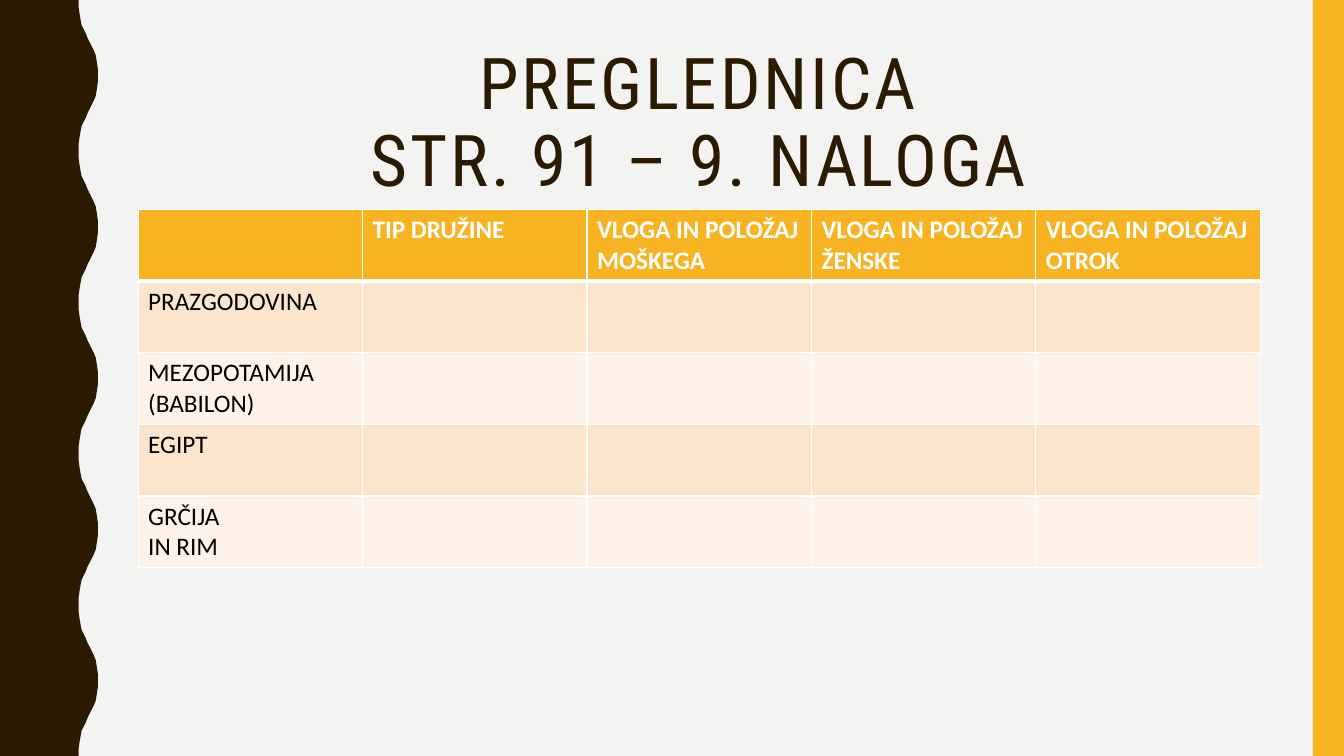
from lxml.etree import SubElement
from pptx import Presentation
from pptx.dml.color import RGBColor
from pptx.enum.shapes import MSO_SHAPE as Shape
from pptx.enum.text import MSO_ANCHOR as Anchor, MSO_AUTO_SIZE as AutoSize, PP_ALIGN as Align
from pptx.oxml.ns import qn
from pptx.util import Pt

PX = 9144
WIDTH, HEIGHT = 1333, 750
PAPER = RGBColor(0xF3, 0xF3, 0xF2)
BROWN = RGBColor(0x2A, 0x1A, 0x00)
AMBER = RGBColor(0xF8, 0xB3, 0x23)
PEACH = RGBColor(0xFC, 0xE5, 0xCD)
CREAM = RGBColor(0xFE, 0xF2, 0xE8)
WHITE = RGBColor(0xFF, 0xFF, 0xFF)
BLACK = RGBColor(0x00, 0x00, 0x00)

HALF_WAVE = [(78, 0), (78, 7), (79, 14), (80, 20), (81, 25), (83, 29), (85, 33), (87, 38),
             (89, 42), (91, 46), (93, 50), (95, 55), (96, 61), (97, 68), (97, 75)]
WAVE_LENGTH = 150
HEADINGS = ["", "TIP DRUŽINE", "VLOGA IN POLOŽAJ MOŠKEGA",
            "VLOGA IN POLOŽAJ ŽENSKE", "VLOGA IN POLOŽAJ OTROK"]
PERIODS = ["PRAZGODOVINA", "MEZOPOTAMIJA\v(BABILON)", "EGIPT", "GRČIJA\vIN RIM"]


def box(*lengths):
    return [length * PX for length in lengths]


def write(frame, text, *, font="Calibri", size=18, color=BLACK, bold=False,
          align=Align.LEFT, line_spacing=None, tracking=None):
    frame.text = text
    paragraph = frame.paragraphs[0]
    paragraph.alignment = align
    paragraph.line_spacing = line_spacing
    for run in paragraph.runs:
        run.font.name = font
        run.font.size = Pt(size)
        run.font.bold = bold
        run.font.color.rgb = color
        if tracking:
            run.font._element.set("spc", str(tracking * 100))


def paint(shape, color):
    shape.shadow.inherit = False
    shape.fill.solid()
    shape.fill.fore_color.rgb = color
    shape.line.fill.background()


def add_wavy_edge(slide):
    wave = HALF_WAVE + [(x, WAVE_LENGTH - y) for x, y in HALF_WAVE[-2::-1]]
    edge = [(x, y + top) for top in range(0, HEIGHT, WAVE_LENGTH) for x, y in wave]
    builder = slide.shapes.build_freeform(0, 0, scale=PX)
    builder.add_line_segments(edge + [(0, HEIGHT)], close=True)
    paint(builder.convert_to_shape(), BROWN)


def add_side_bar(slide):
    paint(slide.shapes.add_shape(Shape.RECTANGLE, *box(1302, 0, 31, HEIGHT)), AMBER)


def add_title(slide, text):
    title = slide.shapes.title
    title.left, title.top, title.width, title.height = box(137, 42, 1113, 163)
    frame = title.text_frame
    frame.word_wrap = True
    frame.auto_size = AutoSize.NONE
    frame.vertical_anchor = Anchor.MIDDLE
    write(frame, text, font="Roboto Condensed", size=51, color=BROWN,
          align=Align.CENTER, line_spacing=0.9, tracking=2)


def add_borders(cell, **widths):
    properties = cell._tc.get_or_add_tcPr()
    for side in "LRTB":
        line = SubElement(properties, qn(f"a:ln{side}"), w=str(Pt(widths.get(side, 1))))
        fill = SubElement(line, qn("a:solidFill"))
        SubElement(fill, qn("a:srgbClr"), val=str(WHITE))


def fill_cell(cell, text, background, borders, **text_format):
    add_borders(cell, **borders)
    cell.fill.solid()
    cell.fill.fore_color.rgb = background
    if text:
        write(cell.text_frame, text, **text_format)


def add_overview(slide):
    row_count, column_count = len(PERIODS) + 1, len(HEADINGS)
    row_height = 71
    table = slide.shapes.add_table(
        row_count, column_count, *box(137, 208, 1113, row_height * row_count)).table
    for column, heading in enumerate(HEADINGS):
        fill_cell(table.cell(0, column), heading, AMBER, {"B": 3}, color=WHITE, bold=True)
    for row, period in enumerate(PERIODS, start=1):
        band = PEACH if row % 2 else CREAM
        borders = {"T": 3} if row == 1 else {}
        for column in range(column_count):
            fill_cell(table.cell(row, column), "" if column else period, band, borders)


def main():
    deck = Presentation()
    deck.slide_width, deck.slide_height = box(WIDTH, HEIGHT)
    slide = deck.slides.add_slide(deck.slide_layouts[5])
    slide.background.fill.solid()
    slide.background.fill.fore_color.rgb = PAPER
    add_wavy_edge(slide)
    add_side_bar(slide)
    add_title(slide, "PREGLEDNICA\vSTR. 91 – 9. NALOGA")
    add_overview(slide)
    deck.save("out.pptx")


if __name__ == "__main__":
    main()
